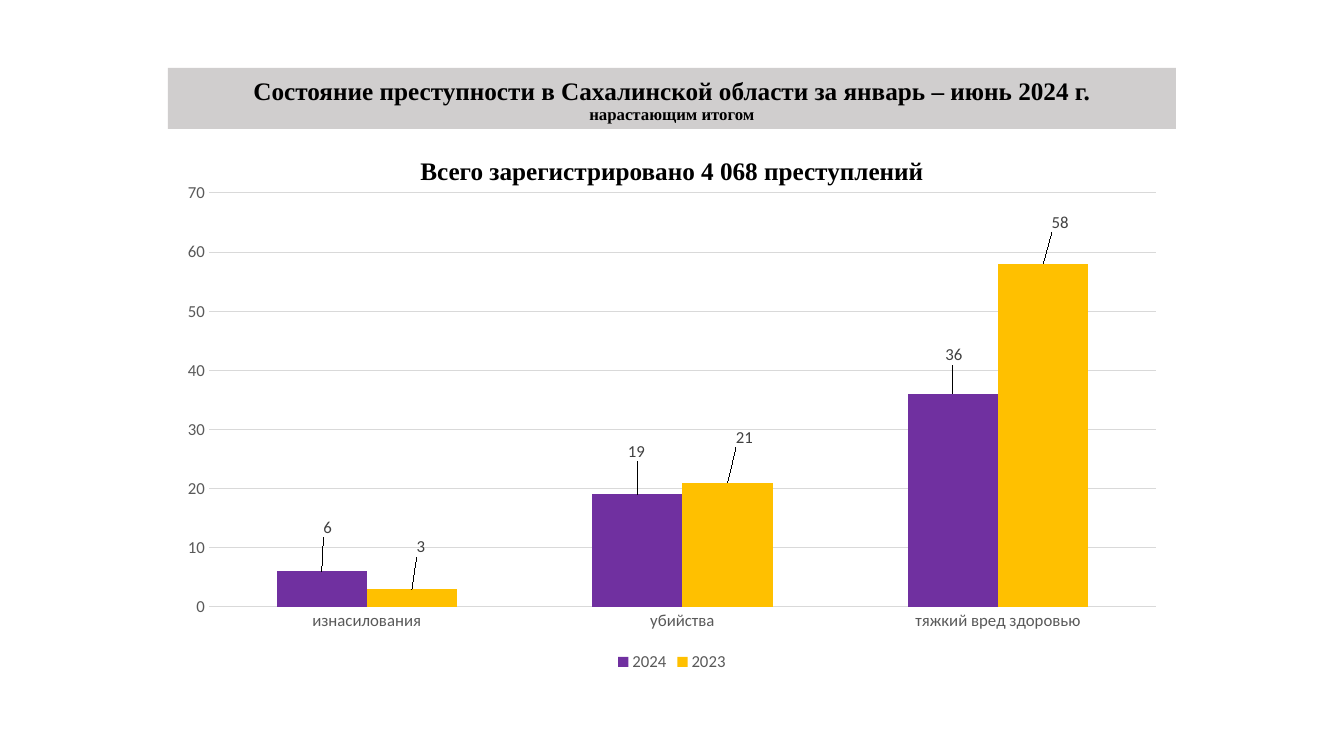
from lxml import etree
from pptx import Presentation
from pptx import util as u
from pptx.chart.data import CategoryChartData
from pptx.dml.color import RGBColor
from pptx.enum import chart as charts, shapes, text
from pptx.oxml.ns import qn

EMU_PER_PX = 914400 / 100.8


def px(length):
    return u.Emu(round(length * EMU_PER_PX))


def colour(value):
    return RGBColor.from_string(value)


class CrimeSlide:
    """Holds the style and the current slide, and draws its elements."""

    heading_font = "Times New Roman"
    chart_font = "Calibri"
    ink = "000000"
    axis_ink = "595959"
    label_ink = "404040"
    grid = "D9D9D9"

    def __init__(self, deck):
        self.slide = deck.slides.add_slide(deck.slide_layouts[6])

    def style(self, font, name, size, ink, bold=False):
        font.name, font.size, font.bold = name, u.Pt(size), bold
        font.color.rgb = colour(ink)

    def heading(self, frame, wording, sizes, spacing, anchor):
        frame.word_wrap = True
        frame.vertical_anchor = anchor
        line = frame.paragraphs[0]
        line.text = wording
        line.alignment = text.PP_ALIGN.CENTER
        line.line_spacing = spacing
        for run, size in zip(line.runs, sizes):
            self.style(run.font, self.heading_font, size, self.ink, True)

    def banner(self, box, fill, wording, sizes):
        banner = self.slide.shapes.add_shape(shapes.MSO_SHAPE.RECTANGLE, *map(px, box))
        banner.shadow.inherit = False
        banner.fill.solid()
        banner.fill.fore_color.rgb = colour(fill)
        banner.line.fill.background()
        self.heading(banner.text_frame, wording, sizes, 0.9, text.MSO_ANCHOR.BOTTOM)

    def subtitle(self, box, wording, size):
        subtitle = self.slide.shapes.add_textbox(*map(px, box))
        self.heading(subtitle.text_frame, wording, [size], 0.8, text.MSO_ANCHOR.TOP)

    def layout(self, x, y, size=None):
        layout = etree.Element(qn("c:layout"))
        manual = etree.SubElement(layout, qn("c:manualLayout"))
        settings = [("x", x), ("y", y)]
        if size:
            settings = [("layoutTarget", "inner"), ("xMode", "edge"), ("yMode", "edge"),
                        *settings, ("w", size[0]), ("h", size[1])]
        for tag, value in settings:
            etree.SubElement(manual, qn(f"c:{tag}")).set("val", str(value))
        return layout

    def axis(self, axis):
        axis.major_tick_mark = axis.minor_tick_mark = charts.XL_TICK_MARK.NONE
        axis.format.line.fill.background()
        self.style(axis.tick_labels.font, self.chart_font, 12, self.axis_ink)

    def columns(self, box, plot_box, categories, series):
        left, top, width, height = box
        data = CategoryChartData()
        data.categories = categories
        for name, _, values, _ in series:
            data.add_series(name, values)
        chart = self.slide.shapes.add_chart(
            charts.XL_CHART_TYPE.COLUMN_CLUSTERED, *map(px, box), data).chart
        chart.has_title = False
        self.style(chart.font, self.chart_font, 10, self.ink)
        self.axis(chart.category_axis)
        self.axis(chart.value_axis)
        chart.value_axis.minimum_scale = 0
        chart.value_axis.maximum_scale = 70
        chart.value_axis.major_unit = 10
        gridline = chart.value_axis.major_gridlines.format.line
        gridline.color.rgb = colour(self.grid)
        gridline.width = u.Pt(0.75)

        chart.has_legend = True
        chart.legend.position = charts.XL_LEGEND_POSITION.BOTTOM
        chart.legend.include_in_layout = False
        self.style(chart.legend.font, self.chart_font, 12, self.axis_ink)

        plot = chart.plots[0]
        plot.gap_width = 150
        plot.overlap = 0
        plot.vary_by_categories = False
        for bars, (_, fill, _, shifts) in zip(plot.series, series):
            bars.format.fill.solid()
            bars.format.fill.fore_color.rgb = colour(fill)
            bars.data_labels.show_value = True
            self.style(bars.data_labels.font, self.chart_font, 12, self.label_ink)
            for index in range(len(shifts)):
                label = bars.points[index].data_label
                self.style(label.font, self.chart_font, 12, self.label_ink)
                label.position = charts.XL_LABEL_POSITION.OUTSIDE_END
            labels = bars.data_labels._element.findall(qn("c:dLbl"))
            for label, (right, down) in zip(labels, shifts):
                label.find(qn("c:idx")).addnext(self.layout(right / width, down / height))

        plot_left, plot_top, plot_width, plot_height = plot_box
        area = plot._element.getparent()
        for automatic in area.findall(qn("c:layout")):
            area.remove(automatic)
        area.insert(0, self.layout((plot_left - left) / width, (plot_top - top) / height,
                                   (plot_width / width, plot_height / height)))


def main():
    deck = Presentation()
    deck.slide_width, deck.slide_height = px(1344), px(756)
    page = CrimeSlide(deck)
    page.banner((168, 68, 1008, 61), "D0CECE",
                "Состояние преступности в Сахалинской области за январь – июнь 2024 г.\n"
                "нарастающим итогом", (18, 12))
    page.subtitle((168, 156, 1008, 36), "Всего зарегистрировано 4 068 преступлений", 18)
    page.columns(
        (168, 173, 1008, 503), (209, 193, 947, 414),
        ("изнасилования", "убийства", "тяжкий вред здоровью"),
        (("2024", "7030A0", (6, 19, 36), ((6, -30), (-1, -29), (1, -25))),
         ("2023", "FFC000", (3, 21, 58), ((9, -28), (17, -31), (17, -27)))))
    deck.save("out.pptx")


if __name__ == "__main__":
    main()
